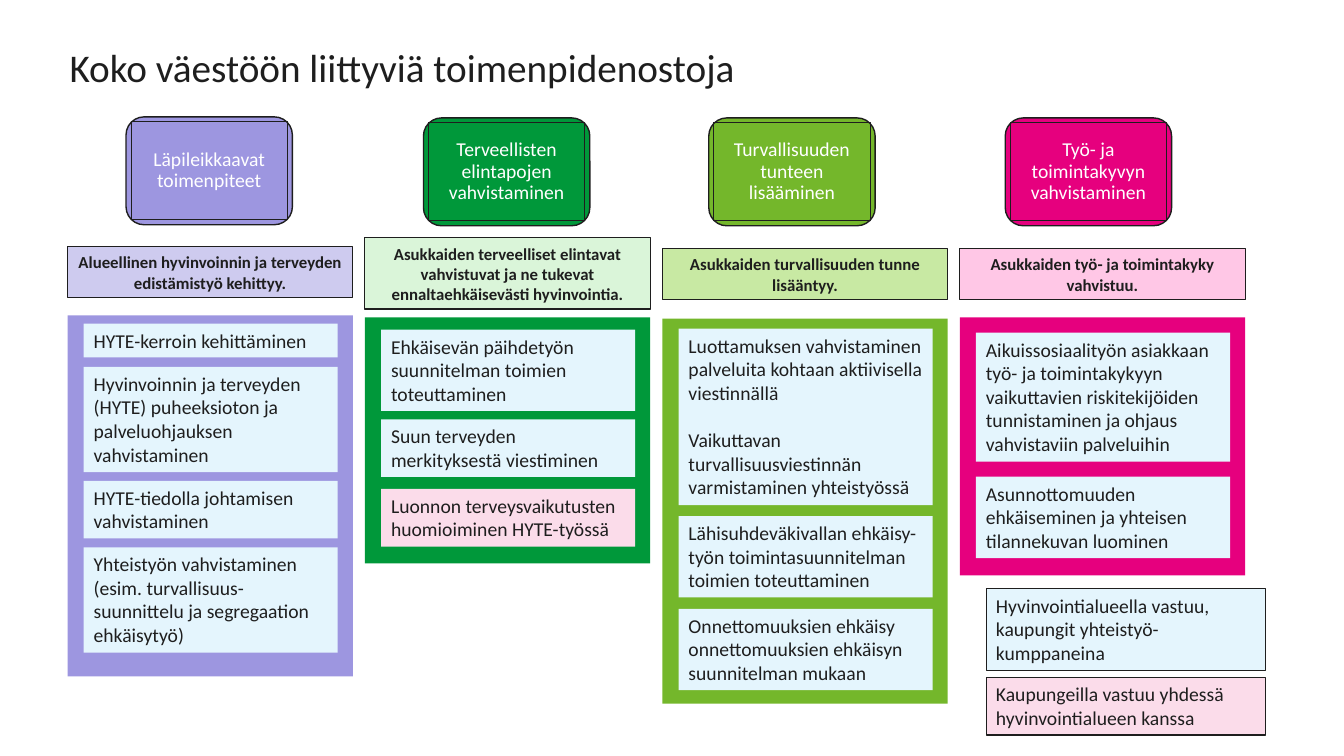
"""Build the slide on health promotion measures for the whole population."""
from dataclasses import dataclass
from pptx import Presentation
from pptx.dml.color import RGBColor
from pptx.enum.shapes import MSO_SHAPE
from pptx.enum.text import MSO_ANCHOR, MSO_AUTO_SIZE, PP_ALIGN
from pptx.util import Inches, Pt


@dataclass
class Theme:
    font: str = "Calibri"
    ink: str = "1E1E1E"
    white: str = "FFFFFF"
    region: str = "E4F5FD"
    city: str = "FBDCEA"
    title_pt: int = 28
    body_pt: int = 14
    goal_pt: int = 12


T = Theme()
CELL = Inches(0.1)
COL_LEFT, COL_PITCH, COL_W = 6.7, 29.5, 28.3
CARD_INDENT, CARD_W = 1.6, 25.2
HEAD_W, HEAD_H, HEAD_INSET = 16.5, 10.7, 0.5
BODY_LINE, GOAL_LINE, PADDING = 2.36, 2.02, 1


def write(tf, text, size=T.body_pt, color=T.ink, bold=False, align=PP_ALIGN.LEFT,
          anchor=MSO_ANCHOR.TOP, spacing=1.0, gap=0):
    tf.word_wrap = True
    tf.auto_size = MSO_AUTO_SIZE.NONE
    tf.vertical_anchor = anchor
    for i, line in enumerate(text.split("\n")):
        p = tf.add_paragraph() if i else tf.paragraphs[0]
        p.alignment, p.line_spacing = align, spacing
        p.space_before = Pt(gap if i else 0)
        r = p.add_run()
        r.text = line
        r.font.name, r.font.size, r.font.bold = T.font, Pt(size), bold
        r.font.color.rgb = RGBColor.from_string(color)


def box(x, y, w, h, fill=None, line=None, kind=MSO_SHAPE.RECTANGLE):
    sp = s.shapes.add_shape(kind, *(int(v * CELL) for v in (x, y, w, h)))
    sp.shadow.inherit = False
    if fill:
        sp.fill.solid()
        sp.fill.fore_color.rgb = RGBColor.from_string(fill)
    else:
        sp.fill.background()
    if line:
        sp.line.color.rgb = RGBColor.from_string(T.ink)
        sp.line.width = Pt(line)
    else:
        sp.line.fill.background()
    return sp


prs = Presentation()
prs.slide_width, prs.slide_height = Inches(13.33), Inches(7.5)
s = prs.slides.add_slide(prs.slide_layouts[5])

title = s.shapes.title
title.left, title.top, title.width, title.height = (int(v * CELL) for v in (5.9, 2.2, 112.2, 7.3))
write(title.text_frame, "Koko väestöön liittyviä toimenpidenostoja", size=T.title_pt,
      anchor=MSO_ANCHOR.BOTTOM, spacing=0.9)

columns = [
    dict(color="9D96E0", tint="CECBEF", head=(12.5, 11.6), goal=(24.5, 2), panel=(31.3, 35.8),
         name="Läpileikkaavat toimenpiteet",
         aim="Alueellinen hyvinvoinnin ja terveyden edistämistyö kehittyy.",
         cards=[(32.1, 1, T.region, "HYTE-kerroin kehittäminen"),
                (36.4, 4, T.region, "Hyvinvoinnin ja terveyden (HYTE) puheeksioton ja "
                                    "palveluohjauksen vahvistaminen"),
                (47.7, 2, T.region, "HYTE-tiedolla johtamisen vahvistaminen"),
                (54.3, 4, T.region, "Yhteistyön vahvistaminen (esim. turvallisuus-suunnittelu "
                                    "ja segregaation ehkäisytyö)")]),
    dict(color="00983A", tint="DAF5D9", head=(42, 11.7), goal=(23.6, 3), panel=(31.5, 24.4),
         name="Terveellisten elintapojen vahvistaminen",
         aim="Asukkaiden terveelliset elintavat vahvistuvat ja ne tukevat "
             "ennaltaehkäisevästi hyvinvointia.",
         cards=[(32.7, 3, T.region, "Ehkäisevän päihdetyön suunnitelman toimien toteuttaminen"),
                (41.6, 2, T.region, "Suun terveyden merkityksestä viestiminen"),
                (48.5, 2, T.city, "Luonnon terveysvaikutusten huomioiminen HYTE-työssä")]),
    dict(color="74B72B", tint="C8E9A3", head=(70.3, 11.7), goal=(24.7, 2), panel=(31.6, 38.2),
         name="Turvallisuuden tunteen lisääminen",
         aim="Asukkaiden turvallisuuden tunne lisääntyy.",
         cards=[(32.6, 7, T.region, "Luottamuksen vahvistaminen palveluita kohtaan aktiivisella "
                                    "viestinnällä\nVaikuttavan turvallisuusviestinnän "
                                    "varmistaminen yhteistyössä"),
                (51.2, 3, T.region, "Lähisuhdeväkivallan ehkäisy-työn toimintasuunnitelman "
                                    "toimien toteuttaminen"),
                (60.4, 3, T.region, "Onnettomuuksien ehkäisy onnettomuuksien ehkäisyn "
                                    "suunnitelman mukaan")]),
    dict(color="E6007E", tint="FFC7E6", head=(99.7, 11.7), goal=(24.7, 2), panel=(31.5, 25.6),
         name="Työ- ja toimintakyvyn vahvistaminen",
         aim="Asukkaiden työ- ja toimintakyky vahvistuu.",
         cards=[(33, 5, T.region, "Aikuissosiaalityön asiakkaan työ- ja toimintakykyyn "
                                  "vaikuttavien riskitekijöiden tunnistaminen ja ohjaus "
                                  "vahvistaviin palveluihin"),
                (47.3, 3, T.region, "Asunnottomuuden ehkäiseminen ja yhteisen tilannekuvan "
                                    "luominen")]),
]

for i, col in enumerate(columns):
    x = COL_LEFT + i * COL_PITCH
    hx, hy = col["head"]
    box(hx, hy, HEAD_W, HEAD_H, col["color"], 1, MSO_SHAPE.ROUNDED_RECTANGLE)
    label = box(hx + HEAD_INSET, hy + HEAD_INSET, HEAD_W - 2 * HEAD_INSET,
                HEAD_H - 2 * HEAD_INSET, line=0.75)
    tf = label.text_frame
    tf.margin_left = tf.margin_right = tf.margin_top = tf.margin_bottom = Inches(0.05)
    write(tf, col["name"], color=T.white, align=PP_ALIGN.CENTER, anchor=MSO_ANCHOR.MIDDLE,
          spacing=0.9)

    top, lines = col["goal"]
    goal = box(x, top, COL_W, PADDING + lines * GOAL_LINE, col["tint"], 0.75)
    write(goal.text_frame, col["aim"], size=T.goal_pt, bold=True, align=PP_ALIGN.CENTER,
          anchor=MSO_ANCHOR.MIDDLE)

    top, height = col["panel"]
    box(x, top, COL_W, height, col["color"])
    for top, lines, fill, text in col["cards"]:
        card = box(x + CARD_INDENT, top, CARD_W, PADDING + lines * BODY_LINE, fill)
        write(card.text_frame, text, gap=17)

legend = [(58.4, 3, T.region, "Hyvinvointialueella vastuu, kaupungit yhteistyö-kumppaneina"),
          (67.2, 2, T.city, "Kaupungeilla vastuu yhdessä hyvinvointialueen kanssa")]
for top, lines, fill, text in legend:
    key = box(97.8, top, 27.7, PADDING + lines * BODY_LINE, fill, 0.75)
    write(key.text_frame, text)

prs.save("out.pptx")
